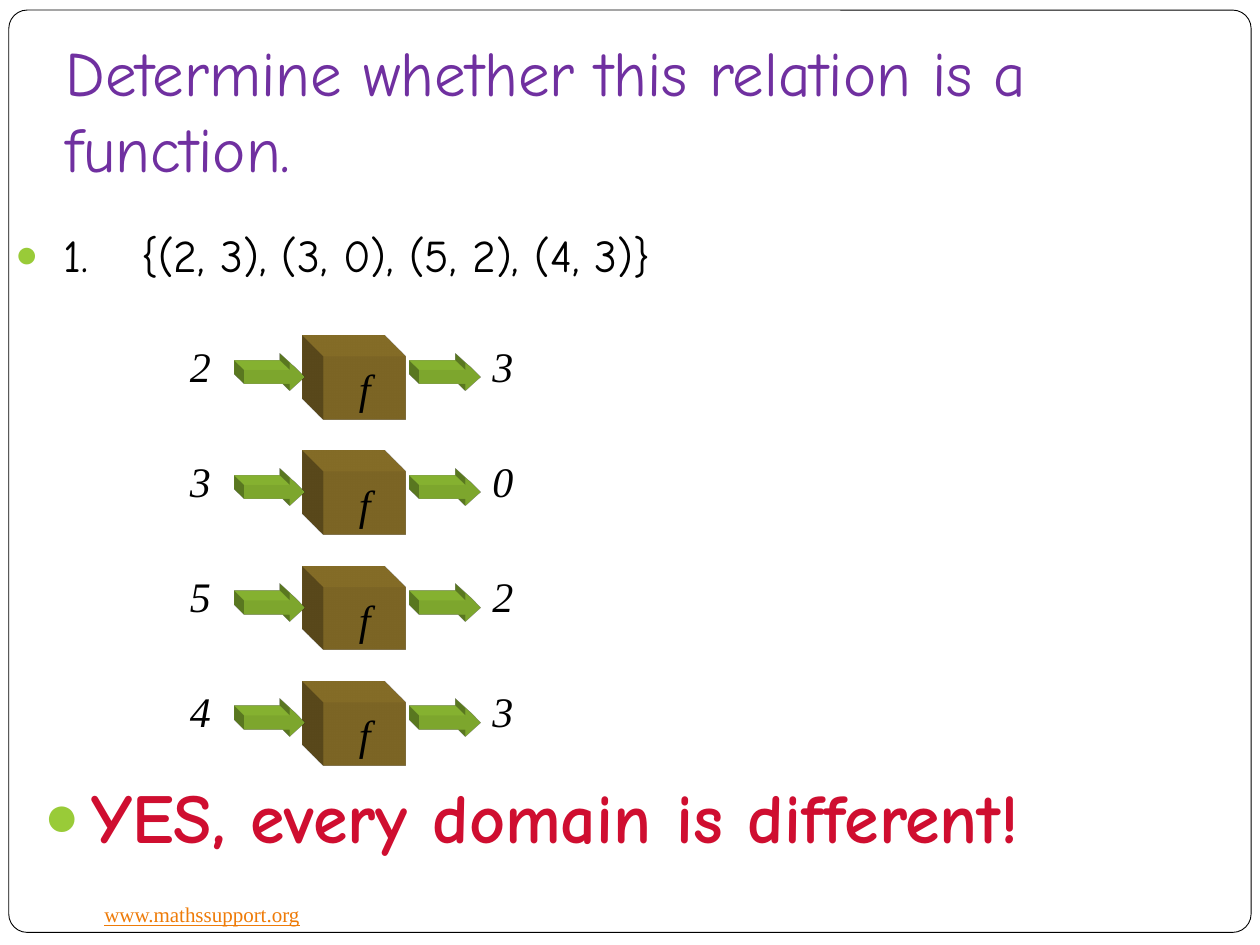
import pptx
import pptx.util
import pptx.dml.color
import pptx.enum.shapes
import pptx.enum.text
import pptx.oxml
import pptx.oxml.ns

RGB = pptx.dml.color.RGBColor
KIND = pptx.enum.shapes.MSO_SHAPE
ALIGN = pptx.enum.text.PP_ALIGN
ANCHOR = pptx.enum.text.MSO_ANCHOR
FIT = pptx.enum.text.MSO_AUTO_SIZE
BLACK = RGB(0x00, 0x00, 0x00)
WHITE = RGB(0xFF, 0xFF, 0xFF)
PURPLE = RGB(0x70, 0x30, 0xA0)
GREEN = RGB(0x99, 0xCB, 0x38)
BROWN = RGB(0x97, 0x7B, 0x2D)
RED = RGB(0xCF, 0x0E, 0x30)
ORANGE = RGB(0xEE, 0x7B, 0x08)
SPACE = 'xmlns:a="http://schemas.openxmlformats.org/drawingml/2006/main"'

deck = pptx.Presentation()
deck.slide_width = pptx.util.Inches(10)
deck.slide_height = pptx.util.Inches(7.5)
col = deck.slide_width / 100
row = deck.slide_height / 75
slide = deck.slides.add_slide(deck.slide_layouts[0])


def write(shape, text, size, color, font="Comic Neue", align=ALIGN.LEFT,
          anchor=ANCHOR.TOP, wrap=True, fit=FIT.NONE, bold=False,
          italic=False, line=False, bullet=False):
    frame = shape.text_frame
    frame.text = text
    frame.word_wrap = wrap
    frame.auto_size = fit
    frame.vertical_anchor = anchor
    para = frame.paragraphs[0]
    para.alignment = align
    if bullet:
        props = para._p.get_or_add_pPr()
        props.set("marL", str(round(3.8 * col)))
        props.set("indent", str(round(-3.8 * col)))
        for mark in (f'<a:buClr {SPACE}><a:srgbClr val="{GREEN}"/></a:buClr>',
                     f'<a:buSzPct {SPACE} val="85000"/>',
                     f'<a:buFont {SPACE} typeface="Arial"/>',
                     f'<a:buChar {SPACE} char="●"/>'):
            props.append(pptx.oxml.parse_xml(mark))
    style = para.runs[0].font
    style.name = font
    style.size = pptx.util.Pt(size)
    style.color.rgb = color
    style.bold = bold
    style.italic = italic
    style.underline = line


def solid(shape, color, depth):
    shape.shadow.inherit = False
    shape.fill.solid()
    shape.fill.fore_color.rgb = color
    shape.line.fill.background()
    props = shape._element.spPr
    props.append(pptx.oxml.parse_xml(
        f'<a:scene3d {SPACE}><a:camera prst="legacyObliqueTopLeft"/>'
        '<a:lightRig rig="legacyFlat3" dir="l"/></a:scene3d>'))
    props.append(pptx.oxml.parse_xml(
        f'<a:sp3d {SPACE} extrusionH="{depth}" prstMaterial="legacyMatte">'
        '<a:bevelT w="13500" h="13500" prst="angle"/>'
        '<a:bevelB w="13500" h="13500" prst="angle"/>'
        f'<a:extrusionClr><a:srgbClr val="{color}"/></a:extrusionClr></a:sp3d>'))


border = slide.shapes.add_shape(KIND.ROUNDED_RECTANGLE, 0.7 * col, 0.8 * row, 98.6 * col, 73.2 * row)
border.adjustments[0] = 0.02
border.shadow.inherit = False
border.fill.solid()
border.fill.fore_color.rgb = WHITE
border.line.color.rgb = BLACK
border.line.width = pptx.util.Pt(0.5)
tree = slide.shapes._spTree
tree.remove(border._element)
tree.insert(2, border._element)

site = slide.shapes.add_textbox(7.3 * col, 71.1 * row, 17.7 * col, 3 * row)
write(site, "www.mathssupport.org", 12, ORANGE, font="Times New Roman",
      wrap=False, fit=FIT.SHAPE_TO_FIT_TEXT, line=True)

title, task = slide.placeholders
for shape, x, y, w, h in ((title, 4.2, 2.7, 85, 12.5), (task, 0.2, 17.5, 100, 8.5)):
    shape.left, shape.top = round(x * col), round(y * row)
    shape.width, shape.height = round(w * col), round(h * row)
write(title, "Determine whether this relation is a function.", 36, PURPLE, anchor=ANCHOR.BOTTOM)
write(task, "1.\t{(2, 3), (3, 0), (5, 2), (4, 3)}", 26, BLACK, bullet=True)

math = dict(size=24, color=BLACK, font="Times New Roman", align=ALIGN.CENTER, italic=True)
for step, (given, result) in enumerate(("23", "30", "52", "43")):
    top = (26.5 + 9.15 * step) * row
    group = slide.shapes.add_group_shape().shapes
    for part in ("out", "box", "in"):
        if part == "box":
            box = group.add_shape(KIND.RECTANGLE, 25.7 * col, top + 1.8 * row, 6.5 * col, 5 * row)
            solid(box, BROWN, 430200)
            write(box, "f", anchor=ANCHOR.MIDDLE, wrap=False, **math)
            for text, x in ((given, 14.1), (result, 38.1)):
                label = group.add_textbox(x * col, top, 3.6 * col, 5 * row)
                write(label, text, fit=FIT.SHAPE_TO_FIT_TEXT, **math)
        else:
            x = 19.4 if part == "in" else 33.3
            arrow = group.add_shape(KIND.RIGHT_ARROW, x * col, top + 2.3 * row, 4.8 * col, 2.2 * row)
            arrow.adjustments[1] = 0.55
            solid(arrow, GREEN, 201600)

answer = slide.shapes.add_textbox(2.5 * col, 60.9 * row, 100 * col, 11.6 * row)
write(answer, "YES, every domain is different!", 40, RED, bold=True, bullet=True)

deck.save("out.pptx")
